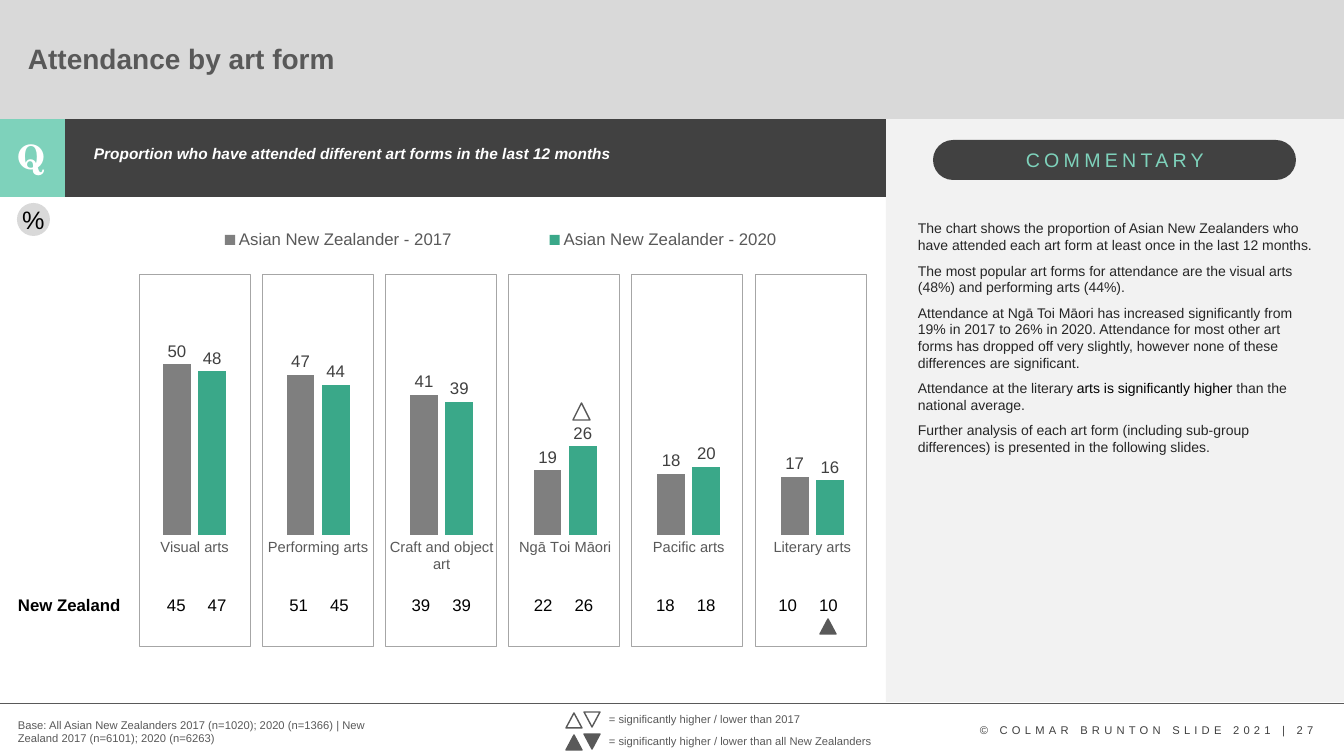
"""Build the slide on attendance by art form."""
from lxml import etree
from pptx import Presentation
from pptx import util as u
from pptx.chart import data as chart_data
from pptx.dml.color import RGBColor
from pptx.enum import chart as ch, shapes, text
from pptx.oxml import ns, parse_xml

PX = u.Inches(1) / 100.8
WHITE = RGBColor(0xFF, 0xFF, 0xFF)
BLACK = RGBColor(0, 0, 0)
INK = RGBColor(0x26, 0x26, 0x26)
CHARCOAL = RGBColor(0x40, 0x40, 0x40)
BAND = RGBColor(0x41, 0x41, 0x41)
SLATE = RGBColor(0x59, 0x59, 0x59)
BAR_GREY = RGBColor(0x7F, 0x7F, 0x7F)
FRAME = RGBColor(0xA6, 0xA6, 0xA6)
SILVER = RGBColor(0xD9, 0xD9, 0xD9)
PALE = RGBColor(0xF2, 0xF2, 0xF2)
MINT = RGBColor(0x7E, 0xD2, 0xBB)
GREEN = RGBColor(0x3A, 0xA8, 0x89)
KIND = shapes.MSO_SHAPE

prs = Presentation()
prs.slide_width, prs.slide_height = round(1344 * PX), round(756 * PX)
slide = prs.slides.add_slide(prs.slide_layouts[6])


def add_figure(parent, kind, box, fill=None, line=None, width=0.5):
    figure = parent.add_shape(kind, *[round(n * PX) for n in box])
    figure.shadow.inherit = False
    if fill is None:
        figure.fill.background()
    else:
        figure.fill.solid()
        figure.fill.fore_color.rgb = fill
    if line is None:
        figure.line.fill.background()
    else:
        figure.line.color.rgb = line
        figure.line.width = u.Pt(width)
    return figure


def add_words(parent, box, words, size, color, bold=False, wrap=True, spacing=0, font="Arial"):
    words_box = parent.add_textbox(*[round(n * PX) for n in box])
    frame = words_box.text_frame
    frame.word_wrap = wrap
    frame.text = words
    for paragraph in frame.paragraphs:
        for run in paragraph.runs:
            run.font.name, run.font.size, run.font.bold = font, u.Pt(size), bold
            run.font.color.rgb = color
            if spacing:
                run._r.get_or_add_rPr().set("spc", str(spacing * 100))
    return frame


page = slide.shapes
add_figure(page, KIND.RECTANGLE, (0, 0, 1344, 119), SILVER)
add_words(page, (970, 718, 364, 24), "© COLMAR BRUNTON SLIDE 2021 | 27", 8, CHARCOAL, spacing=3)
footer_rule = page.add_connector(shapes.MSO_CONNECTOR.STRAIGHT, 0, round(703 * PX),
                                 round(1344 * PX), round(703 * PX))
footer_rule.line.color.rgb = SLATE
footer_rule.line.width = u.Pt(0.5)
etree.SubElement(footer_rule._element.spPr, ns.qn("a:effectLst"))
add_figure(page, KIND.RECTANGLE, (886, 119, 458, 583), PALE)
add_figure(page, KIND.RECTANGLE, (65, 119, 821, 78), BAND)
add_figure(page, KIND.RECTANGLE, (0, 119, 65, 78), MINT)
question = add_words(page, (8, 131, 47, 50), "Q", 24, WHITE, bold=True, font="TeX Gyre Schola")
question.paragraphs[0].alignment = text.PP_ALIGN.CENTER
pill = add_figure(page, KIND.ROUNDED_RECTANGLE, (933, 140, 363, 40), BAND)
pill.adjustments[0] = 0.5
add_words(page, (1016, 143, 204, 34), "COMMENTARY", 14, MINT, wrap=False, spacing=3)

title = add_words(page, (18, 21, 1128, 79), "Attendance by art form", 20, SLATE, bold=True)
title.vertical_anchor = text.MSO_ANCHOR.MIDDLE
title.paragraphs[0].line_spacing = 0.9
subtitle = add_words(page, (84, 141, 766, 46),
                     "Proportion who have attended different art forms in the last 12 months",
                     11, WHITE, bold=True)
subtitle.paragraphs[0].line_spacing = 0.9
subtitle.paragraphs[0].runs[0].font.italic = True

attendance = chart_data.CategoryChartData()
attendance.categories = ["Visual arts", "Performing arts", "Craft and object art",
                         "Ngā Toi Māori", "Pacific arts", "Literary arts"]
attendance.add_series("Asian New Zealander - 2017", (50, 47, 41, 19, 18, 17))
attendance.add_series("Asian New Zealander - 2020", (48, 44, 39, 26, 20, 16))
chart = page.add_chart(ch.XL_CHART_TYPE.COLUMN_CLUSTERED,
                       *[round(n * PX) for n in (119, 178, 769, 499)], attendance).chart
chart.has_title = False
chart.font.name, chart.font.size = "Arial", u.Pt(10)
chart.font.color.rgb = BLACK
chart.has_legend = True
chart.legend.position = ch.XL_LEGEND_POSITION.BOTTOM
chart.legend.include_in_layout = False
art_axis, percent_axis = chart.category_axis, chart.value_axis
art_axis.major_tick_mark = ch.XL_TICK_MARK.NONE
art_axis.format.line.fill.background()
for label_font, size in ((chart.legend.font, 12), (art_axis.tick_labels.font, 10.5)):
    label_font.name, label_font.size = "Arial", u.Pt(size)
    label_font.color.rgb = SLATE
percent_axis.minimum_scale, percent_axis.maximum_scale = 0, 100
percent_axis.has_major_gridlines = False
percent_axis.visible = False
columns = chart.plots[0]
columns.gap_width, columns.overlap, columns.vary_by_categories = 219, -27, False
for series, color in zip(columns.series, (BAR_GREY, GREEN)):
    series.format.fill.solid()
    series.format.fill.fore_color.rgb = color
    labels = series.data_labels
    labels.show_value = True
    labels.position = ch.XL_LABEL_POSITION.OUTSIDE_END
    labels.font.name, labels.font.size = "Arial", u.Pt(12)
    labels.font.color.rgb = CHARCOAL

plot_area = chart._chartSpace.find(".//" + ns.qn("c:plotArea"))
legend = chart.legend._element
for part, index, target, bounds in ((plot_area, 0, '<c:layoutTarget val="inner"/>', (0.018, 0.031, 0.964, 0.685)),
                                    (legend, 1, "", (0.018, 0.084, 0.957, 0.08))):
    for layout in part.findall(ns.qn("c:layout")):
        part.remove(layout)
    sizes = "".join(f'<c:{key} val="{value}"/>' for key, value in zip("xywh", bounds))
    part.insert(index, parse_xml(
        f'<c:layout {ns.nsdecls("c")}><c:manualLayout>{target}<c:xMode val="edge"/>'
        f'<c:yMode val="edge"/>{sizes}</c:manualLayout></c:layout>'))
chart._chartSpace.find(ns.qn("c:txPr")).addprevious(parse_xml(
    f'<c:spPr {ns.nsdecls("c", "a")}><a:noFill/><a:ln><a:noFill/></a:ln></c:spPr>'))

national = [(45, 47), (51, 45), (39, 39), (22, 26), (18, 18), (10, 10)]
national_table = page.add_table(1, 18, *[round(n * PX) for n in (25, 591, 824, 41)]).table
national_table.first_row = national_table.horz_banding = False
for index, column in enumerate(national_table.columns):
    column.width = round((693 / 17 if index else 131) * PX)
    cell = national_table.cell(0, index)
    cell.fill.background()
    art, year = divmod(index - 1, 3)
    figure = cell.text_frame.paragraphs[0]
    if index and year < 2:
        figure.text = str(national[art][year])
    figure.alignment = text.PP_ALIGN.CENTER
    figure.font.name, figure.font.size = "Arial", u.Pt(12)
    figure.font.color.rgb = BLACK

percent = add_figure(page, KIND.OVAL, (17, 203, 33, 33), SILVER).text_frame
percent.margin_left = percent.margin_right = percent.margin_top = percent.margin_bottom = 0
percent.word_wrap = False
percent.vertical_anchor = text.MSO_ANCHOR.MIDDLE
percent.text = "%"
percent.paragraphs[0].alignment = text.PP_ALIGN.CENTER
percent_font = percent.paragraphs[0].runs[0].font
percent_font.name, percent_font.size = "Arial", u.Pt(18)
percent_font.color.rgb = BLACK

for art in range(6):
    add_figure(page, KIND.RECTANGLE, (139 + art * 123.2, 274, 111, 372), line=FRAME)
add_words(page, (8, 590, 124, 30), "New Zealand", 12, BLACK, bold=True, wrap=False)
add_words(page, (8, 713, 377, 37),
          "Base: All Asian New Zealanders 2017 (n=1020); 2020 (n=1366) | "
          "New Zealand 2017 (n=6101); 2020 (n=6263)", 8, SLATE)

for top, fill, width, group_name in ((707, WHITE, 215, "2017"), (729, SLATE, 286, "all New Zealanders")):
    key = page.add_group_shape().shapes
    add_words(key, (599, top, width, 24), f"= significantly higher / lower than {group_name}",
              8, SLATE, wrap=False)
    add_figure(key, KIND.ISOSCELES_TRIANGLE, (566, top + 6, 16, 15), fill, SLATE, 1)
    lower = add_figure(key, KIND.ISOSCELES_TRIANGLE, (584, top + 5, 16, 15), fill, SLATE, 1)
    lower.rotation = 180
add_figure(page, KIND.ISOSCELES_TRIANGLE, (573, 403, 17, 17), WHITE, SLATE, 1)
add_figure(page, KIND.ISOSCELES_TRIANGLE, (820, 619, 16, 15), SLATE, SLATE, 1)

commentary = add_words(page, (908, 215, 418, 248), "\n".join((
    "The chart shows the proportion of Asian New Zealanders who have attended each art form "
    "at least once in the last 12 months.",
    "The most popular art forms for attendance are the visual arts (48%) and performing arts (44%).",
    "Attendance at Ngā Toi Māori has increased significantly from 19% in 2017 to 26% in 2020. "
    "Attendance for most other art forms has dropped off very slightly, however none of these "
    "differences are significant.",
    "Attendance at the literary ",
    "Further analysis of each art form (including sub-group differences) is presented in the "
    "following slides.")), 10, INK)
for paragraph in commentary.paragraphs[1:]:
    paragraph.space_before = u.Pt(6)
for words, color in (("arts is significantly higher ", BLACK), ("than the national average.", INK)):
    run = commentary.paragraphs[3].add_run()
    run.text = words
    run.font.name, run.font.size = "Arial", u.Pt(10)
    run.font.color.rgb = color

prs.save("out.pptx")
